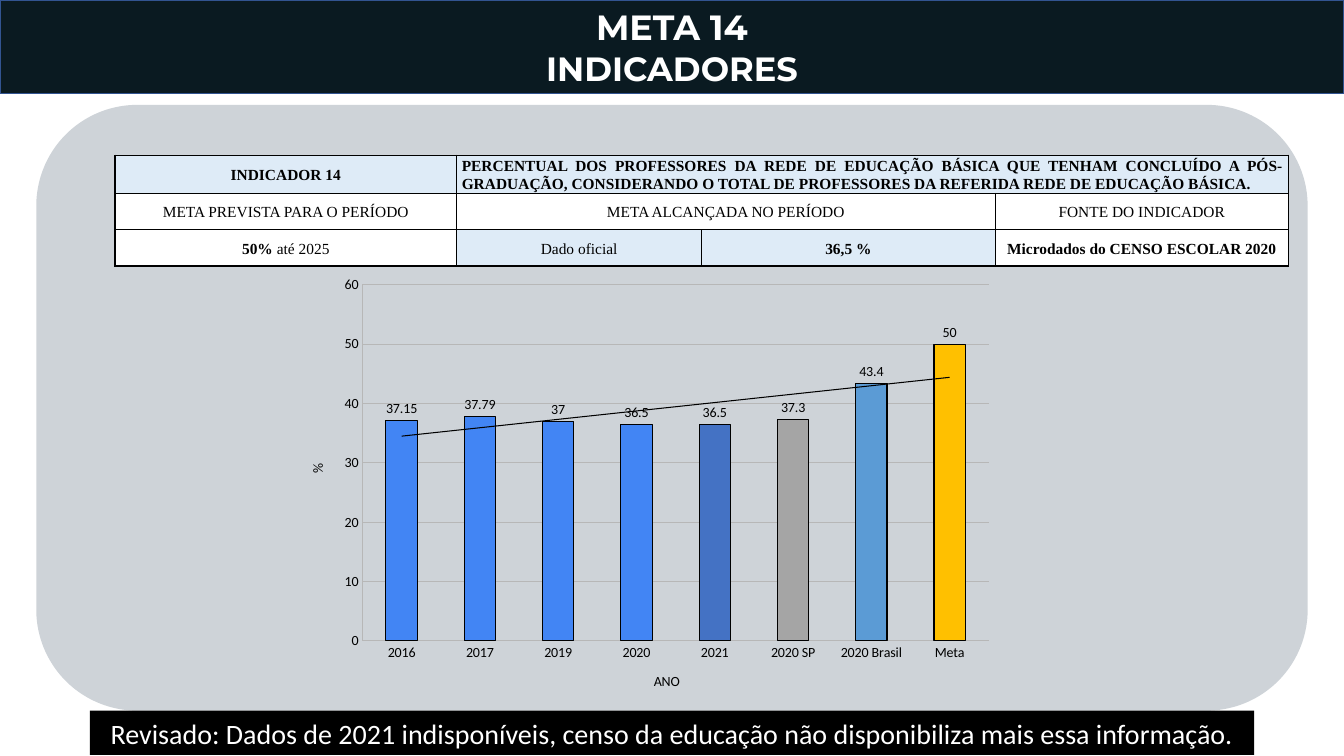
from lxml.etree import SubElement
from pptx import Presentation
from pptx.chart.data import CategoryChartData
from pptx.dml.color import RGBColor
from pptx.enum.chart import XL_CHART_TYPE, XL_LABEL_POSITION, XL_TICK_MARK
from pptx.enum.shapes import MSO_SHAPE
from pptx.enum.text import MSO_ANCHOR, MSO_AUTO_SIZE, PP_ALIGN
from pptx.oxml import parse_xml
from pptx.oxml.ns import nsdecls, qn
from pptx.util import Inches, Pt


def paint(form, shade):
    form.fill.solid()
    form.fill.fore_color.rgb = RGBColor.from_string(shade)


def style(font, name, size, shade, bold=False):
    font.name = name
    font.size = Pt(size)
    font.bold = bold
    font.color.rgb = RGBColor.from_string(shade)


deck = Presentation()
deck.slide_width = Inches(13.33)
deck.slide_height = Inches(7.5)
slide = deck.slides.add_slide(deck.slide_layouts[5])
shapes = slide.shapes

title = shapes.title
title.left, title.top = Inches(0), Inches(0)
title.width, title.height = Inches(13.33), Inches(0.93)
paint(title, "0A1A21")
title.line.color.rgb = RGBColor.from_string("325491")
title.line.width = Pt(1)
frame = title.text_frame
frame.text = "META 14\nINDICADORES"
frame.auto_size = MSO_AUTO_SIZE.NONE
frame.vertical_anchor = MSO_ANCHOR.MIDDLE
for para, size in zip(frame.paragraphs, (25, 24)):
    para.alignment = PP_ALIGN.CENTER
    style(para.font, "Montserrat", size, "FFFFFF", True)

panel = shapes.add_shape(MSO_SHAPE.ROUNDED_RECTANGLE, Inches(0.36), Inches(1.04), Inches(12.61), Inches(6.01))
panel.shadow.inherit = False
paint(panel, "CED3D8")
panel.line.fill.background()

BLUE, WHITE = "DEEBF7", "FFFFFF"
cells = {
    (0, 0): (BLUE, [("INDICADOR 14", True)]),
    (0, 1): (BLUE, [("PERCENTUAL DOS PROFESSORES DA REDE DE EDUCAÇÃO BÁSICA QUE TENHAM CONCLUÍDO A PÓS-GRADUAÇÃO, "
                     "CONSIDERANDO O TOTAL DE PROFESSORES DA REFERIDA REDE DE EDUCAÇÃO BÁSICA.", True)]),
    (1, 0): (WHITE, [("META PREVISTA PARA O PERÍODO", False)]),
    (1, 1): (WHITE, [("META ALCANÇADA NO PERÍODO", False)]),
    (1, 3): (WHITE, [("FONTE DO INDICADOR", False)]),
    (2, 0): (WHITE, [("50%", True), (" até 2025", False)]),
    (2, 1): (BLUE, [("Dado oficial", False)]),
    (2, 2): (BLUE, [("36,5 %", True)]),
    (2, 3): (WHITE, [("Microdados do CENSO ESCOLAR 2020", True)]),
}
table = shapes.add_table(3, 4, Inches(1.14), Inches(1.54), Inches(11.64), Inches(1.1)).table
for col, wide in zip(table.columns, (3.39, 2.43, 2.91, 2.91)):
    col.width = Inches(wide)
for row, high in zip(table.rows, (0.38, 0.36, 0.36)):
    row.height = Inches(high)
table.cell(0, 1).merge(table.cell(0, 3))
table.cell(1, 1).merge(table.cell(1, 2))
for r in range(3):
    for c in range(4):
        cell = table.cell(r, c)
        shade, runs = cells.get((r, c), (BLUE if r == 0 else WHITE, []))
        cell.margin_left = cell.margin_right = Inches(0.05)
        cell.margin_top, cell.margin_bottom = Inches(0.01), Inches(0)
        cell.vertical_anchor = MSO_ANCHOR.MIDDLE
        props = cell._tc.get_or_add_tcPr()
        for side in ("lnL", "lnR", "lnT", "lnB"):
            edge = SubElement(props, qn("a:" + side), w=str(Pt(1)))
            SubElement(SubElement(edge, qn("a:solidFill")), qn("a:srgbClr"), val="000000")
        paint(cell, shade)
        para = cell.text_frame.paragraphs[0]
        para.alignment = PP_ALIGN.JUSTIFY if (r, c) == (0, 1) else PP_ALIGN.CENTER
        para.line_spacing = 1.07
        para.space_after = Pt(8)
        style(para.font, "Times New Roman", 11, "000000")
        for text, bold in runs:
            run = para.add_run()
            run.text = text
            run.font.bold = bold

data = CategoryChartData()
data.categories = ["2016", "2017", "2019", "2020", "2021", "2020 SP", "2020 Brasil", "Meta"]
data.add_series("Series 1", (37.15, 37.79, 37, 36.5, 36.5, 37.3, 43.4, 50))
chart = shapes.add_chart(XL_CHART_TYPE.COLUMN_CLUSTERED, Inches(2.85), Inches(2.65),
                         Inches(7.1), Inches(4.39), data).chart
chart.has_legend = False
chart.has_title = False
style(chart.font, "Calibri", 10, "000000")
for axis, text in ((chart.category_axis, "ANO"), (chart.value_axis, "%")):
    axis.major_tick_mark = axis.minor_tick_mark = XL_TICK_MARK.NONE
    axis.format.line.color.rgb = RGBColor.from_string("B7B7B7")
    axis.axis_title.text_frame.text = text
    style(axis.axis_title.text_frame.paragraphs[0].font, "Calibri", 10, "000000")
scale = chart.value_axis
scale.minimum_scale, scale.maximum_scale, scale.major_unit = 0, 60, 10
grid = scale.major_gridlines.format.line
grid.color.rgb = RGBColor.from_string("B7B7B7")
grid.width = Pt(0.75)

plot = chart.plots[0]
plot.gap_width = 150
plot.vary_by_categories = False
plot.has_data_labels = True
plot.data_labels.show_value = True
plot.data_labels.position = XL_LABEL_POSITION.OUTSIDE_END
bars = plot.series[0]
shades = {4: "4472C4", 5: "A5A5A5", 6: "5B9BD5", 7: "FFC000"}
forms = [(bars.format, "4285F4")] + [(bars.points[i].format, shade) for i, shade in shades.items()]
for form, shade in forms:
    paint(form, shade)
    form.line.color.rgb = RGBColor.from_string("000000")
    form.line.width = Pt(0.75)
trend = parse_xml(
    f'<c:trendline {nsdecls("c", "a")}><c:spPr><a:ln w="9525"><a:solidFill><a:srgbClr val="000000"/>'
    '</a:solidFill></a:ln></c:spPr><c:trendlineType val="linear"/>'
    '<c:dispRSqr val="0"/><c:dispEq val="0"/></c:trendline>')
bars._element.find(qn("c:cat")).addprevious(trend)

area = chart._chartSpace.chart.plotArea
for old in area.findall(qn("c:layout")):
    area.remove(old)
area.insert(0, parse_xml(
    f'<c:layout {nsdecls("c")}><c:manualLayout><c:layoutTarget val="inner"/>'
    '<c:xMode val="edge"/><c:yMode val="edge"/><c:x val="0.105"/><c:y val="0.04"/>'
    '<c:w val="0.875"/><c:h val="0.805"/></c:manualLayout></c:layout>'))

note = shapes.add_shape(MSO_SHAPE.RECTANGLE, Inches(0.89), Inches(7.05), Inches(11.55), Inches(0.44))
note.shadow.inherit = False
paint(note, "000000")
note.line.fill.background()
frame = note.text_frame
frame.text = "Revisado: Dados de 2021 indisponíveis, censo da educação não disponibiliza mais essa informação."
frame.word_wrap = True
frame.auto_size = MSO_AUTO_SIZE.SHAPE_TO_FIT_TEXT
frame.paragraphs[0].alignment = PP_ALIGN.CENTER
style(frame.paragraphs[0].font, "Calibri", 20, "FFFFFF")

deck.save("out.pptx")
